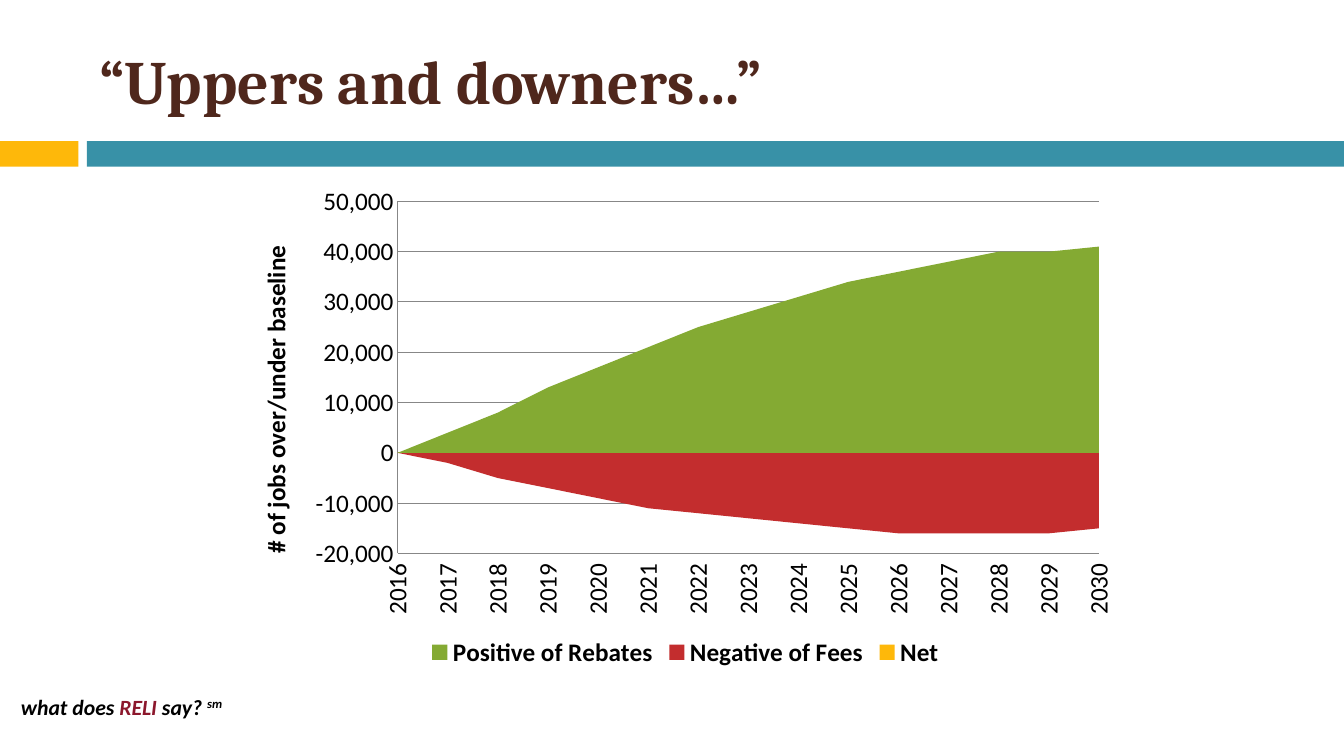
from dataclasses import dataclass

import pptx
import pptx.chart.data
import pptx.dml.color
import pptx.enum.chart
import pptx.enum.shapes
import pptx.enum.text
import pptx.oxml
import pptx.util
from pptx.util import Cm

CHART_NS = "http://schemas.openxmlformats.org/drawingml/2006/chart"
YEARS = range(2016, 2031)


@dataclass
class Band:
    left: float
    width: float
    color: str


@dataclass
class Span:
    text: str
    color: str
    baseline: int = 0


@dataclass
class Series:
    name: str
    thousands: list[int]
    color: str


BANDS = [Band(0, 1.98, "FEB80A"), Band(2.19, 31.68, "3891A7")]
TITLE = [Span("“Uppers and downers…”", "4F271C")]
TAGLINE = [
    Span("what does ", "000000"),
    Span("RELI ", "8C172C"),
    Span("say? ", "000000"),
    Span("sm", "000000", 30000),
]
SERIES = [
    Series("Positive of Rebates",
           [0, 4, 8, 13, 17, 21, 25, 28, 31, 34, 36, 38, 40, 40, 41], "84AA33"),
    Series("Negative of Fees",
           [0, -2, -5, -7, -9, -11, -12, -13, -14, -15, -16, -16, -16, -16, -15],
           "C32D2E"),
    Series("Net",
           [0, 2, 4, 6, 8, 10, 12, 15, 17, 19, 21, 22, 24, 25, 25], "FEB80A"),
]


def rgb(color: str) -> pptx.dml.color.RGBColor:
    return pptx.dml.color.RGBColor.from_string(color)


def style_font(font, name: str, size: float, color: str, bold: bool = False) -> None:
    font.name = name
    font.size = pptx.util.Pt(size)
    font.bold = bold
    font.color.rgb = rgb(color)


def add_band(page, band: Band) -> None:
    shape = page.shapes.add_shape(
        pptx.enum.shapes.MSO_SHAPE.RECTANGLE,
        Cm(band.left), Cm(3.56), Cm(band.width), Cm(0.64))
    shape.shadow.inherit = False
    shape.fill.solid()
    shape.fill.fore_color.rgb = rgb(band.color)
    shape.line.fill.background()


def add_text(page, left: float, top: float, width: float, height: float,
             spans: list[Span], name: str, size: float,
             italic: bool = False, grow: bool = False) -> None:
    box = page.shapes.add_textbox(Cm(left), Cm(top), Cm(width), Cm(height))
    frame = box.text_frame
    frame.word_wrap = not grow
    if grow:
        frame.auto_size = pptx.enum.text.MSO_AUTO_SIZE.SHAPE_TO_FIT_TEXT
    else:
        frame.vertical_anchor = pptx.enum.text.MSO_ANCHOR.MIDDLE
    para = frame.paragraphs[0]
    for span in spans:
        run = para.add_run()
        run.text = span.text
        style_font(run.font, name, size, span.color, True)
        run.font.italic = italic
        if span.baseline:
            run.font._element.set("baseline", str(span.baseline))


def manual_layout(inner: bool = False, **fractions: float):
    target = '<c:layoutTarget val="inner"/>' if inner else ""
    modes = "".join(f'<c:{key}Mode val="edge"/>' for key in "xy")
    sizes = "".join(f'<c:{key} val="{value}"/>' for key, value in fractions.items())
    return pptx.oxml.parse_xml(
        f'<c:layout xmlns:c="{CHART_NS}"><c:manualLayout>'
        f"{target}{modes}{sizes}</c:manualLayout></c:layout>")


def replace_layout(parent, layout, index: int) -> None:
    for old in parent.findall(f"{{{CHART_NS}}}layout"):
        parent.remove(old)
    parent.insert(index, layout)


def turn_upright(body) -> None:
    body.set("rot", "-5400000")
    body.set("vert", "horz")


def style_axes(chart) -> None:
    marks = pptx.enum.chart.XL_TICK_MARK
    years, jobs = chart.category_axis, chart.value_axis
    for axis in (years, jobs):
        style_font(axis.tick_labels.font, "Calibri", 18, "000000")
        axis.format.line.color.rgb = rgb("878787")
        axis.minor_tick_mark = marks.NONE
    years.has_major_gridlines = False
    years.major_tick_mark = marks.CROSS
    years.tick_label_position = pptx.enum.chart.XL_TICK_LABEL_POSITION.LOW
    turn_upright(years._element.txPr.bodyPr)

    jobs.minimum_scale, jobs.maximum_scale, jobs.major_unit = -20000, 50000, 10000
    jobs.major_tick_mark = marks.NONE
    jobs.has_major_gridlines = True
    jobs.major_gridlines.format.line.color.rgb = rgb("878787")
    jobs.tick_labels.number_format = "#,##0"
    jobs.tick_labels.number_format_is_linked = False
    for crossing in jobs._element.findall(f"{{{CHART_NS}}}crossBetween"):
        crossing.set("val", "midCat")

    title = jobs.axis_title
    run = title.text_frame.paragraphs[0].add_run()
    run.text = "# of jobs over/under baseline"
    style_font(run.font, "Calibri", 18, "000000", True)
    turn_upright(title.text_frame._txBody.bodyPr)
    replace_layout(title._element, manual_layout(x=0.02, y=0.13), 1)


def add_jobs_chart(page) -> None:
    data = pptx.chart.data.CategoryChartData(number_format="#,##0")
    data.categories = [str(year) for year in YEARS]
    for series in SERIES:
        data.add_series(series.name, [value * 1000 for value in series.thousands])
    chart = page.shapes.add_chart(
        pptx.enum.chart.XL_CHART_TYPE.AREA,
        Cm(5.94), Cm(4.45), Cm(22.66), Cm(12.5), data).chart
    chart.has_title = False
    style_font(chart.font, "Calibri", 18, "000000")
    chart.plots[0].vary_by_categories = False
    for area, series in zip(chart.plots[0].series, SERIES):
        area.format.fill.solid()
        area.format.fill.fore_color.rgb = rgb(series.color)
        area.format.line.fill.background()
    style_axes(chart)
    chart.has_legend = True
    chart.legend.position = pptx.enum.chart.XL_LEGEND_POSITION.BOTTOM
    chart.legend.include_in_layout = False
    style_font(chart.legend.font, "Calibri", 18, "000000", True)
    plot_layout = manual_layout(inner=True, x=0.18, y=0.05, w=0.78, h=0.71)
    replace_layout(chart._chartSpace.chart.plotArea, plot_layout, 0)


def main() -> None:
    deck = pptx.Presentation()
    deck.slide_width, deck.slide_height = Cm(33.87), Cm(19.05)
    page = deck.slides.add_slide(deck.slide_layouts[6])
    for band in BANDS:
        add_band(page, band)
    add_text(page, 0.28, 17.35, 5.92, 0.91, TAGLINE, "Calibri", 15.5,
             italic=True, grow=True)
    add_text(page, 2.26, 0.64, 30.2, 2.74, TITLE, "Cambria", 44)
    add_jobs_chart(page)
    deck.save("out.pptx")


if __name__ == "__main__":
    main()
